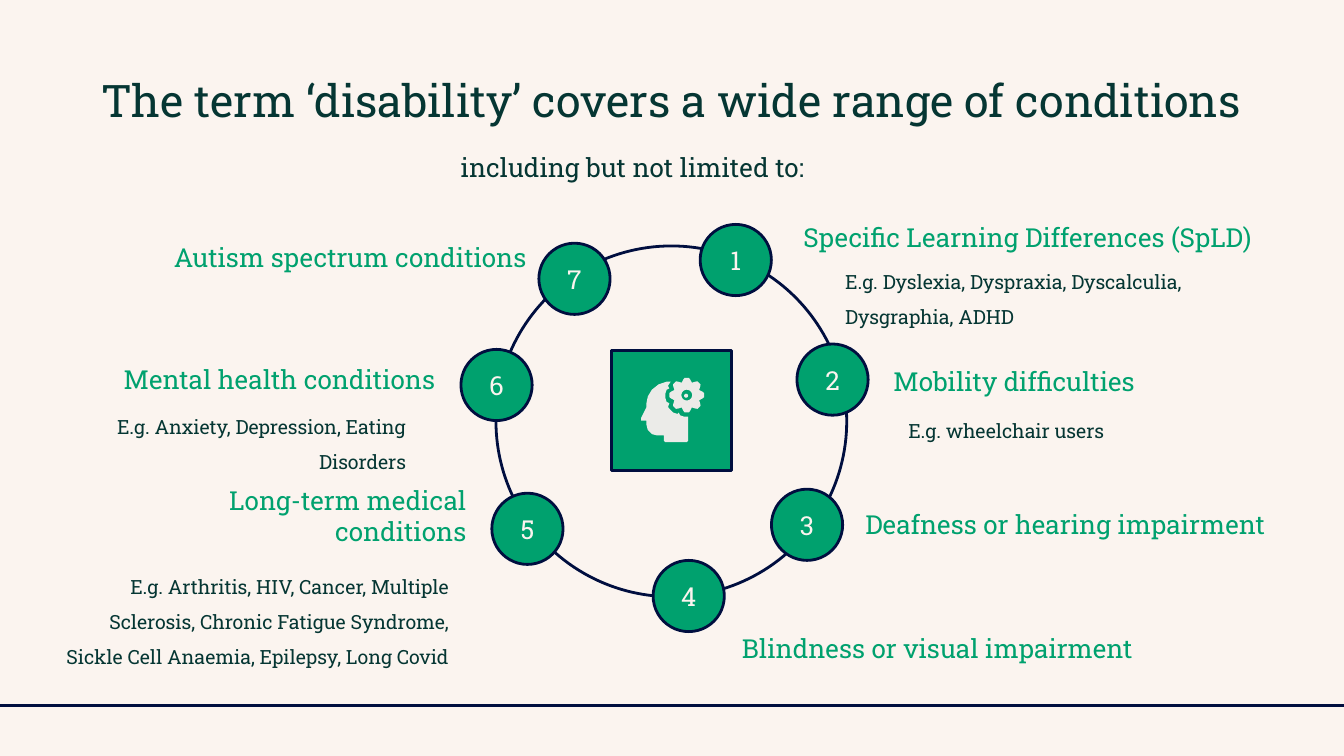
"""Build a slide on the range of conditions covered by the term 'disability'."""
from math import cos, radians, sin

from lxml import etree
from pptx import Presentation
from pptx.dml.color import RGBColor
from pptx.enum.shapes import MSO_CONNECTOR, MSO_SHAPE
from pptx.enum.text import MSO_ANCHOR, MSO_AUTO_SIZE, PP_ALIGN
from pptx.oxml.ns import qn
from pptx.util import Inches, Pt

CREAM = RGBColor(0xFB, 0xF4, 0xEF)
NAVY = RGBColor(0x00, 0x0E, 0x3F)
GREEN = RGBColor(0x00, 0xA1, 0x6E)
DARK_GREEN = RGBColor(0x05, 0x36, 0x33)
LIGHT_GREY = RGBColor(0xEB, 0xEB, 0xE8)
FONT = "Roboto Slab"
LEFT, CENTER, RIGHT = PP_ALIGN.LEFT, PP_ALIGN.CENTER, PP_ALIGN.RIGHT
TOP, MIDDLE, BOTTOM = MSO_ANCHOR.TOP, MSO_ANCHOR.MIDDLE, MSO_ANCHOR.BOTTOM
OVAL, RECTANGLE = MSO_SHAPE.OVAL, MSO_SHAPE.RECTANGLE
STRAIGHT = MSO_CONNECTOR.STRAIGHT
NO_AUTOFIT = MSO_AUTO_SIZE.NONE


def write_text(shape, text, size, color, align, anchor, inset=0.1, spacing=None):
    frame = shape.text_frame
    frame.word_wrap = True
    frame.auto_size = NO_AUTOFIT
    frame.vertical_anchor = anchor
    frame.margin_left = frame.margin_right = Inches(0.1)
    frame.margin_top = frame.margin_bottom = Inches(inset)
    paragraph = frame.paragraphs[0]
    paragraph.alignment = align
    if spacing:
        paragraph.line_spacing = spacing
    run = paragraph.add_run()
    run.text = text
    run.font.name = FONT
    run.font.size = Pt(size)
    run.font.color.rgb = color


def style_shape(shape, fill=None, outline=NAVY):
    shape.shadow.inherit = False
    if fill is None:
        shape.fill.background()
    else:
        shape.fill.solid()
        shape.fill.fore_color.rgb = fill
    if outline is None:
        shape.line.fill.background()
    else:
        shape.line.color.rgb = outline
        shape.line.width = Pt(1.5)


presentation = Presentation()
presentation.slide_width = Inches(10)
presentation.slide_height = Inches(10) * 9 // 16
slide = presentation.slides.add_slide(presentation.slide_layouts[5])
slide.background.fill.solid()
slide.background.fill.fore_color.rgb = CREAM
shapes = slide.shapes

footer_line = shapes.add_connector(STRAIGHT, 0, Inches(5.25), Inches(10), Inches(5.25))
footer_line.line.color.rgb = NAVY
footer_line.line.width = Pt(1.5)
etree.SubElement(footer_line._element.spPr, qn("a:effectLst"))

title = shapes.title
title.left, title.top = Inches(0.27), Inches(0.44)
title.width, title.height = Inches(9.45), Inches(0.63)
write_text(title, "The term ‘disability’ covers a wide range of conditions",
           24, DARK_GREEN, CENTER, TOP)

subtitle = shapes.add_textbox(Inches(3.33), Inches(1.08), Inches(2.86), Inches(0.57))
write_text(subtitle, "including but not limited to:", 14, DARK_GREEN, LEFT, TOP, inset=0.05)

ring = shapes.add_shape(OVAL, Inches(3.69), Inches(1.83), Inches(2.61), Inches(2.61))
style_shape(ring)

conditions = [
    ("Specific Learning Differences (SpLD)", 5.88, 1.45, 3.64, LEFT),
    ("Mobility difficulties", 6.55, 2.52, 3.3, LEFT),
    ("Deafness or hearing impairment", 6.34, 3.59, 3.6, LEFT),
    ("Blindness or visual impairment", 5.11, 4.51, 3.42, RIGHT),
    ("Long-term medical conditions", 0.58, 3.64, 2.99, RIGHT),
    ("Mental health conditions", 0.54, 2.51, 2.8, RIGHT),
    ("Autism spectrum conditions", 1.03, 1.6, 2.99, RIGHT),
]
for text, left, top, width, align in conditions:
    label = shapes.add_textbox(Inches(left), Inches(top), Inches(width), Inches(0.53))
    write_text(label, text, 14, GREEN, align, BOTTOM)

examples = [
    ("E.g. Dyslexia, Dyspraxia, Dyscalculia, Dysgraphia, ADHD", 6.19, 1.82, 2.91, 0.44, LEFT),
    ("E.g. wheelchair users", 6.66, 2.93, 2.91, 0.44, LEFT),
    ("E.g. Arthritis, HIV, Cancer, Multiple Sclerosis, Chronic Fatigue Syndrome, "
     "Sickle Cell Anaemia, Epilepsy, Long Covid", 0.3, 4.09, 3.14, 1.12, RIGHT),
    ("E.g. Anxiety, Depression, Eating Disorders", 0.32, 2.9, 2.8, 0.44, RIGHT),
]
for text, left, top, width, height, align in examples:
    example = shapes.add_textbox(Inches(left), Inches(top), Inches(width), Inches(height))
    write_text(example, text, 10.5, DARK_GREEN, align, TOP, spacing=1.5)

badge_positions = [(5.21, 1.67), (5.93, 2.56), (5.74, 3.64), (4.86, 4.17),
                   (3.66, 3.67), (3.43, 2.6), (4.01, 1.81)]
for number, (left, top) in enumerate(badge_positions, start=1):
    badge = shapes.add_shape(OVAL, Inches(left), Inches(top), Inches(0.53), Inches(0.53))
    style_shape(badge, GREEN)
    write_text(badge, str(number), 14, CREAM, CENTER, MIDDLE)

icon_tile = shapes.add_shape(RECTANGLE, Inches(4.55), Inches(2.61), Inches(0.89), Inches(0.89))
style_shape(icon_tile, GREEN)

head = [
    (4.96, 2.84), (4.9, 2.86), (4.85, 2.9), (4.82, 2.95), (4.81, 3), (4.81, 3.03),
    (4.77, 3.11), (4.77, 3.13), (4.81, 3.13), (4.81, 3.16), (4.82, 3.2), (4.85, 3.23),
    (4.89, 3.24), (4.94, 3.24), (4.94, 3.28), (4.95, 3.29), (5.11, 3.29), (5.12, 3.28),
    (5.12, 3.1), (5.09, 3.1), (5.06, 3.09), (5.05, 3.07), (5.04, 3.08), (5.01, 3.07),
    (4.99, 3.05), (4.97, 3.03), (4.98, 3), (4.96, 2.99), (4.95, 2.96), (4.95, 2.93),
    (4.96, 2.9), (4.98, 2.89), (4.97, 2.87), (4.99, 2.84),
]
gear_x, gear_y = 5.11, 2.94
tooth = [(-12, 0.12), (-7, 0.13), (7, 0.13), (12, 0.12), (22.5, 0.1)]
gear_rim = [(gear_x + radius * sin(radians(start + angle)),
             gear_y - radius * cos(radians(start + angle)))
            for start in range(0, 360, 45) for angle, radius in tooth]
gear_hole = [(gear_x + 0.04 * sin(radians(angle)), gear_y + 0.04 * cos(radians(angle)))
             for angle in range(0, 360, 15)]
for contours in ([head], [gear_rim, gear_hole]):
    outlines = [[(Inches(x), Inches(y)) for x, y in contour] for contour in contours]
    builder = shapes.build_freeform(*outlines[0][0])
    builder.add_line_segments(outlines[0][1:])
    for outline in outlines[1:]:
        builder.move_to(*outline[0])
        builder.add_line_segments(outline[1:])
    style_shape(builder.convert_to_shape(), LIGHT_GREY, None)

gear_hub = shapes.add_shape(OVAL, Inches(5.09), Inches(2.93), Inches(0.03), Inches(0.03))
style_shape(gear_hub, LIGHT_GREY, None)

presentation.save("out.pptx")
